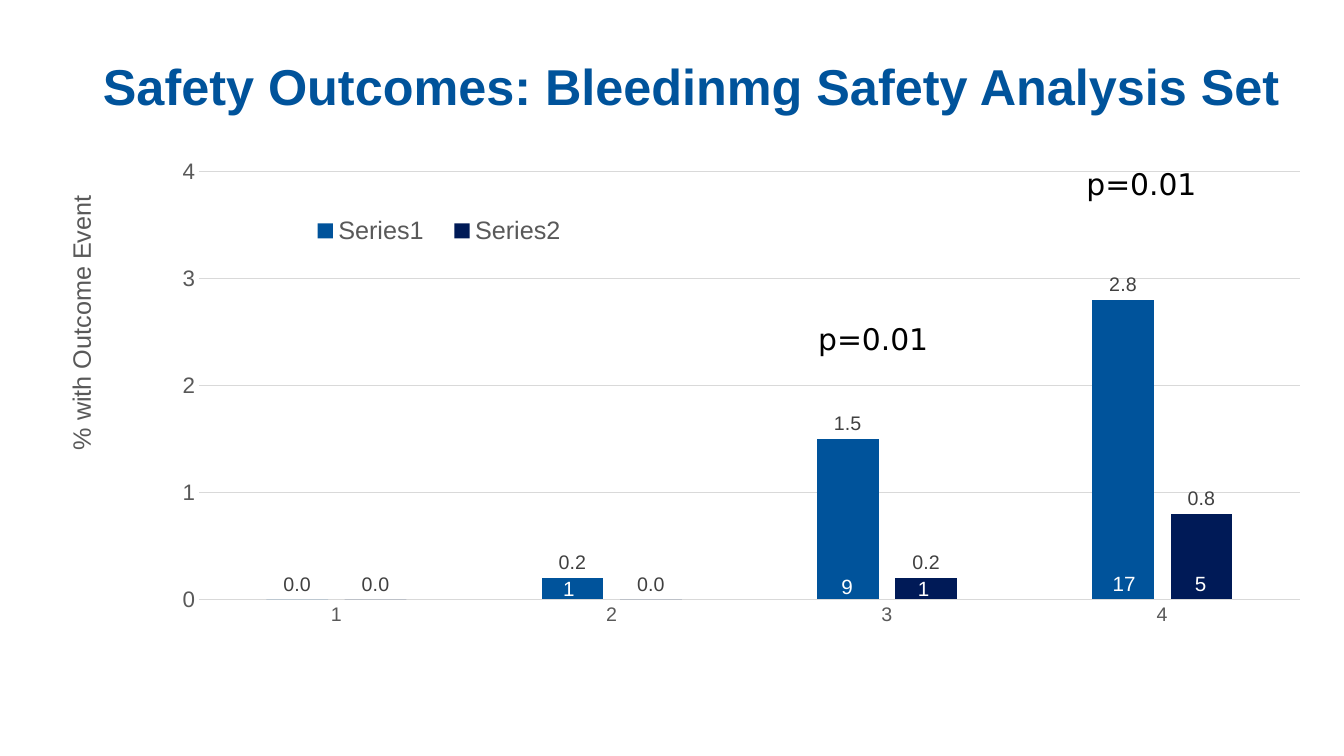
from dataclasses import dataclass

from pptx import Presentation
from pptx.chart.data import CategoryChartData
from pptx.dml.color import RGBColor as Rgb
from pptx.enum.chart import XL_CHART_TYPE as ChartType
from pptx.enum.chart import XL_LABEL_POSITION as LabelPosition
from pptx.enum.chart import XL_LEGEND_POSITION as LegendPosition
from pptx.enum.chart import XL_TICK_MARK as TickMark
from pptx.enum.text import MSO_ANCHOR as Anchor
from pptx.enum.text import MSO_AUTO_SIZE as AutoSize
from pptx.enum.text import PP_ALIGN as Align
from pptx.oxml import parse_xml
from pptx.oxml.ns import nsdecls
from pptx.util import Cm, Pt


@dataclass(frozen=True)
class Theme:
    font: str = "Arial"
    p_value_font: str = "DejaVu Sans"
    blue: str = "00539B"
    navy: str = "001A57"
    grid: str = "D9D9D9"
    axis_text: str = "595959"
    label_text: str = "404040"
    black: str = "000000"
    white: str = "FFFFFF"
    title_size: float = 36
    p_value_size: float = 21.3
    legend_size: float = 18
    value_size: float = 16
    label_size: float = 14
    count_size: float = 14.7


theme = Theme()


def style(font, size, color, name=theme.font, bold=False):
    font.name, font.size, font.bold = name, Pt(size), bold
    font.color.rgb = Rgb.from_string(color)


def place(part, index, **fractions):
    """Give a chart part a manual layout, in fractions of the chart."""
    for old in part.xpath("c:layout"):
        part.remove(old)
    target = '<c:layoutTarget val="inner"/>' if part.tag.endswith("plotArea") else ""
    modes = '<c:xMode val="edge"/><c:yMode val="edge"/>'
    values = "".join(f'<c:{key} val="{value}"/>' for key, value in fractions.items())
    part.insert(index, parse_xml(
        f'<c:layout {nsdecls("c")}><c:manualLayout>{target}{modes}{values}'
        "</c:manualLayout></c:layout>"))


presentation = Presentation()
presentation.slide_width, presentation.slide_height = Cm(33.87), Cm(19.05)
slide = presentation.slides.add_slide(presentation.slide_layouts[5])

# Title
title = slide.shapes.title
title.left, title.top, title.width, title.height = Cm(2.34), Cm(0), Cm(30.81), Cm(3.07)
title.text_frame.auto_size = AutoSize.NONE
title.text_frame.vertical_anchor = Anchor.BOTTOM
heading = title.text_frame.paragraphs[0]
heading.alignment, heading.line_spacing = Align.LEFT, 0.9
heading_run = heading.add_run()
heading_run.text = "Safety Outcomes: Bleedinmg Safety Analysis Set"
style(heading_run.font, theme.title_size, theme.blue, bold=True)

# Bleeding rates
rates = CategoryChartData(number_format="#,##0.0")
rates.categories = ["1", "2", "3", "4"]
rates.add_series("Series1", (0, 0.2, 1.5, 2.8))
rates.add_series("Series2", (0, 0, 0.2, 0.8))
chart = slide.shapes.add_chart(ChartType.COLUMN_CLUSTERED, Cm(1.19), Cm(0.79),
                               Cm(32.92), Cm(16.76), rates).chart
chart.has_title = False
style(chart.font, 10, theme.black)
bars = chart.plots[0]
bars.gap_width, bars.overlap, bars.vary_by_categories = 219, -27, False
for series, color in zip(bars.series, (theme.blue, theme.navy)):
    series.format.fill.solid()
    series.format.fill.fore_color.rgb = Rgb.from_string(color)
    labels = series.data_labels
    labels.show_value, labels.position = True, LabelPosition.OUTSIDE_END
    labels.number_format, labels.number_format_is_linked = "#,##0.0", False
    style(labels.font, theme.label_size, theme.label_text)

# Axes
outcomes, percent = chart.category_axis, chart.value_axis
for axis, size in ((outcomes, theme.label_size), (percent, theme.value_size)):
    axis.major_tick_mark = axis.minor_tick_mark = TickMark.NONE
    style(axis.tick_labels.font, size, theme.axis_text)
percent.minimum_scale, percent.maximum_scale, percent.major_unit = 0, 4, 1
percent.tick_labels.number_format = "0"
percent.tick_labels.number_format_is_linked = False
percent.format.line.fill.background()
percent.has_major_gridlines = True
for line in (outcomes.format.line, percent.major_gridlines.format.line):
    line.color.rgb, line.width = Rgb.from_string(theme.grid), Pt(0.75)
percent_run = percent.axis_title.text_frame.paragraphs[0].add_run()
percent_run.text = "% with Outcome Event"
style(percent_run.font, theme.legend_size, theme.axis_text)

# Legend and chart layout
chart.has_legend = True
chart.legend.position = LegendPosition.BOTTOM
chart.legend.include_in_layout = False
style(chart.legend.font, theme.legend_size, theme.axis_text)
percent_title = chart.element.xpath(".//c:valAx/c:title")[0]
turned = percent_title.xpath(".//a:bodyPr")[0]
turned.set("rot", "-5400000")
turned.set("vert", "horz")
place(chart.element.xpath("c:chart/c:plotArea")[0], 0, x=0.116, y=0.211, w=0.843, h=0.643)
place(chart.element.xpath("c:chart/c:legend")[0], 1, x=0.19, y=0.27, w=0.22, h=0.06)
place(percent_title, 1, x=0.01, y=0.24)

# P values above the bars
for left, top in ((20.37, 7.95), (27.13, 4.04)):
    frame = slide.shapes.add_textbox(Cm(left), Cm(top), Cm(3.33), Cm(1.17)).text_frame
    frame.word_wrap, frame.auto_size = False, AutoSize.SHAPE_TO_FIT_TEXT
    p_value = frame.paragraphs[0].add_run()
    p_value.text = "p=0.01"
    style(p_value.font, theme.p_value_size, theme.black, theme.p_value_font)

# Event counts inside the bars
for count, left, top in (("1", 13.72, 14.38), ("1", 22.66, 14.38), ("9", 20.73, 14.33),
                         ("17", 27.71, 14.27), ("5", 29.64, 14.27)):
    frame = slide.shapes.add_textbox(Cm(left), Cm(top), Cm(1.24), Cm(1.02)).text_frame
    frame.word_wrap = True
    frame.paragraphs[0].alignment = Align.CENTER
    events = frame.paragraphs[0].add_run()
    events.text = count
    style(events.font, theme.count_size, theme.white)

presentation.save("out.pptx")
